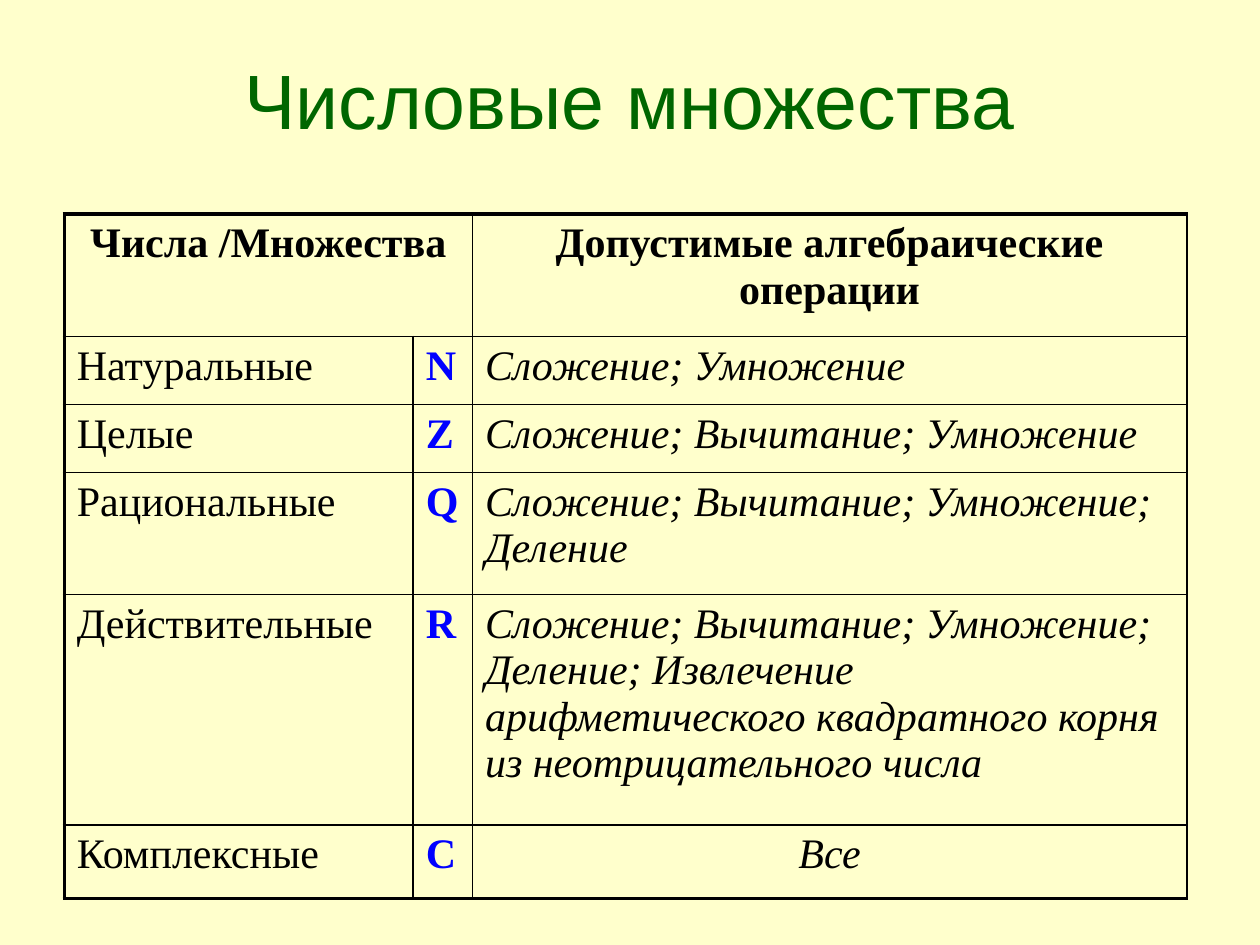
from lxml import etree
from pptx import Presentation
from pptx.dml.color import RGBColor
from pptx.enum import text as t
from pptx.oxml import ns
from pptx.util import Inches, Pt

# Content
TITLE = "Числовые множества"
HEAD = ("Числа /Множества", "", "Допустимые алгебраические операции")
SUM, DIFF = "Сложение; Умножение", "Сложение; Вычитание; Умножение"
QUOT = DIFF + "; Деление"
ROOT = QUOT + "; Извлечение арифметического квадратного корня из неотрицательного числа"
ROWS = [
    ("Натуральные", "N", SUM),
    ("Целые", "Z", DIFF),
    ("Рациональные", "Q", QUOT),
    ("Действительные", "R", ROOT),
    ("Комплексные", "C", "Все"),
]
WIDTHS = (2.77, 0.47, 5.67)
HEIGHTS = (0.97, 0.54, 0.54, 0.97, 1.83, 0.58)
PAPER, INK, BLUE, GREEN = "FFFFCC", "000000", "0000FF", "006600"
THICK, THIN = 2.25, 1
STYLES = ({}, {"color": BLUE, "bold": True}, {"italic": True})


def rgb(code):
    return RGBColor.from_string(code)


def write(frame, words, size=24, font="Times New Roman", color=INK,
          bold=False, italic=False, center=False):
    par = frame.paragraphs[0]
    par.alignment = t.PP_ALIGN.CENTER if center else t.PP_ALIGN.LEFT
    run = par.add_run()
    run.text = words
    face = run.font
    face.size, face.name, face.bold, face.italic = Pt(size), font, bold, italic
    face.color.rgb = rgb(color)


def border(cell, **sides):
    props = cell._tc.get_or_add_tcPr()
    for place, (side, width) in enumerate(sides.items()):
        line = etree.Element(ns.qn("a:ln" + side), w=str(Pt(width)))
        fill = etree.SubElement(line, ns.qn("a:solidFill"))
        etree.SubElement(fill, ns.qn("a:srgbClr"), val=INK)
        props.insert(place, line)


# Slide and title
prs = Presentation()
prs.slide_width, prs.slide_height = Inches(10), Inches(7.5)
slide = prs.slides.add_slide(prs.slide_layouts[5])
slide.background.fill.solid()
slide.background.fill.fore_color.rgb = rgb(PAPER)
title = slide.shapes.title
title.left, title.top = Inches(0.51), Inches(0.36)
title.width, title.height = Inches(8.98), Inches(0.84)
frame = title.text_frame
frame.auto_size = t.MSO_AUTO_SIZE.NONE
frame.vertical_anchor = t.MSO_ANCHOR.BOTTOM
write(frame, TITLE, size=44, font="Arial", color=GREEN, center=True)

# Table grid
grid = slide.shapes.add_table(
    len(HEIGHTS), len(WIDTHS), Inches(0.51), Inches(1.7),
    Inches(sum(WIDTHS)), Inches(sum(HEIGHTS))).table
grid.first_row = grid.horz_banding = False
for col, width in zip(grid.columns, WIDTHS):
    col.width = Inches(width)
for row, height in zip(grid.rows, HEIGHTS):
    row.height = Inches(height)
grid.cell(0, 0).merge(grid.cell(0, 1))

# Cells: a thick frame on the left, top and bottom
last = len(ROWS)
for r, row in enumerate([HEAD] + ROWS):
    for c, words in enumerate(row):
        cell = grid.cell(r, c)
        cell.fill.background()
        border(cell, L=THIN if c else THICK, R=THIN,
               T=THIN if r else THICK, B=THICK if r == last else THIN)
        if r == 0 and words:
            write(cell.text_frame, words, bold=True, center=True)
        elif words:
            write(cell.text_frame, words, center=words == "Все", **STYLES[c])

prs.save("out.pptx")
